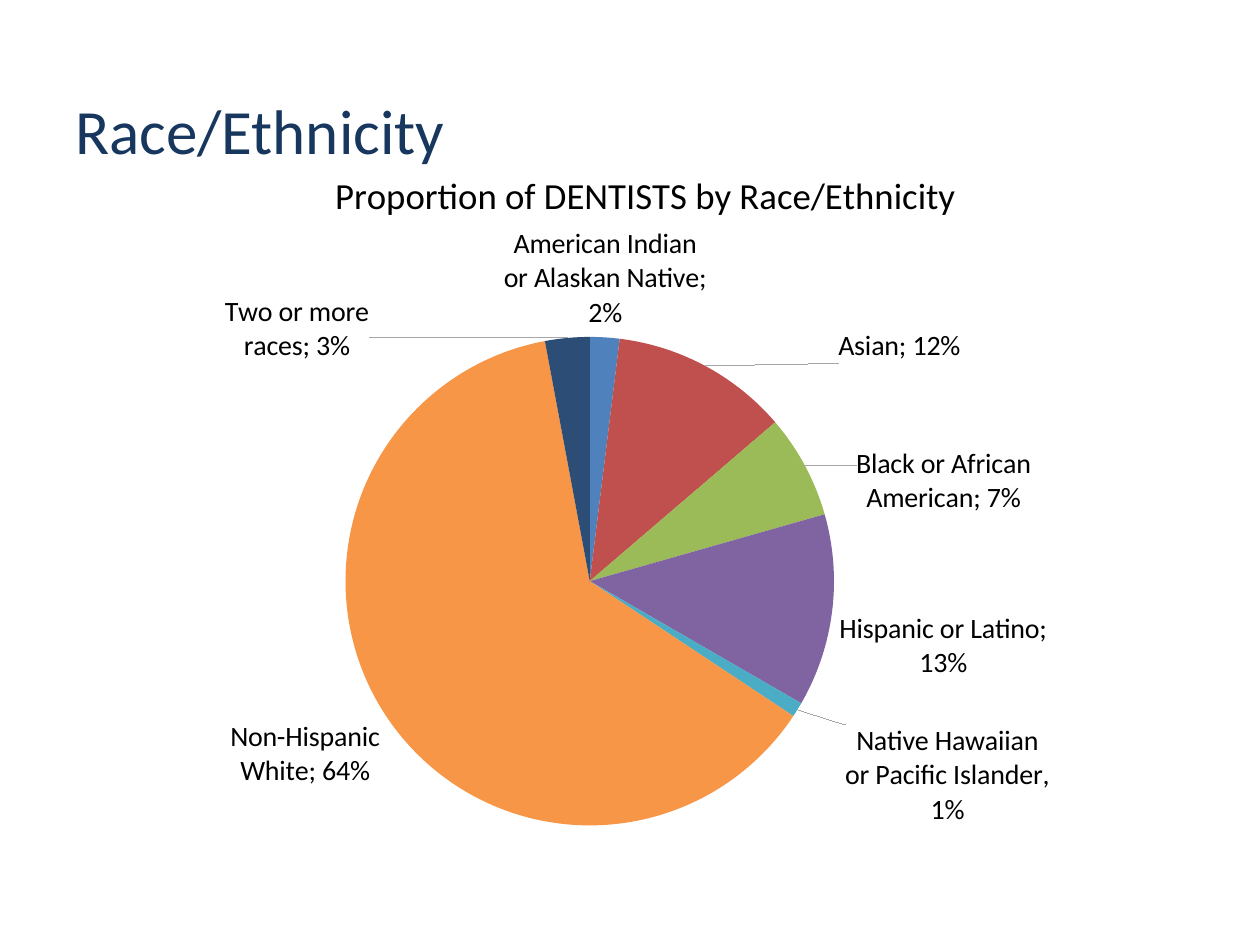
"""Build a slide with a pie chart of dentists by race and ethnicity."""
from typing import NamedTuple, Optional

from lxml import etree
from pptx import Presentation
from pptx.chart.data import CategoryChartData
from pptx.dml.color import RGBColor
from pptx.enum.chart import XL_CHART_TYPE, XL_LABEL_POSITION
from pptx.enum.text import MSO_ANCHOR
from pptx.oxml.ns import qn
from pptx.util import Emu, Pt

PIE = XL_CHART_TYPE.PIE
OUTSIDE_END = XL_LABEL_POSITION.OUTSIDE_END
MIDDLE = MSO_ANCHOR.MIDDLE

PX_PER_INCH = 126
FONT = "Calibri"
LABEL_SIZE = 16
NAVY = RGBColor(0x17, 0x37, 0x5E)
BLACK = RGBColor(0x00, 0x00, 0x00)
GRAY = RGBColor(0xA6, 0xA6, 0xA6)
BLUE = RGBColor(0x4F, 0x81, 0xBD)
RED = RGBColor(0xC0, 0x50, 0x4D)
GREEN = RGBColor(0x9B, 0xBB, 0x59)
PURPLE = RGBColor(0x80, 0x64, 0xA2)
TEAL = RGBColor(0x4B, 0xAC, 0xC6)
ORANGE = RGBColor(0xF7, 0x96, 0x46)
DARK_BLUE = RGBColor(0x2C, 0x4D, 0x75)


class Box(NamedTuple):
    left: int
    top: int
    width: int
    height: int


class Slice(NamedTuple):
    group: str
    share: float
    color: RGBColor
    label_shift: Optional[tuple[int, int]] = None
    separator: str = "; "


SLIDE_WIDTH, SLIDE_HEIGHT = 1260, 945
HEADING_BOX = Box(63, 52, 766, 155)
CHART_BOX = Box(63, 163, 1062, 664)
PIE_BOX = Box(283, 174, 489, 489)
CHART_TITLE_AT = (266, 0)

SLICES = [
    Slice("American Indian or Alaskan Native", 0.02, BLUE),
    Slice("Asian", 0.12, RED, (130, 4)),
    Slice("Black or African American", 0.07, GREEN, (45, 53)),
    Slice("Hispanic or Latino", 0.13, PURPLE),
    Slice("Native Hawaiian or Pacific Islander", 0.01, TEAL, (41, 11), ", "),
    Slice("Non-Hispanic White", 0.64, ORANGE),
    Slice("Two or more races", 0.03, DARK_BLUE, (-198, 33)),
]


def px(length: int) -> Emu:
    return Emu(round(length * 914400 / PX_PER_INCH))


def style_font(font, size: int, color: RGBColor) -> None:
    font.name = FONT
    font.size = Pt(size)
    font.bold = False
    font.color.rgb = color


def write_text(frame, text: str, *, size: int, color: RGBColor = BLACK) -> None:
    run = frame.paragraphs[0].add_run()
    run.text = text
    style_font(run.font, size, color)


def place_in_chart(element, index: int, left: int, top: int,
                   size: Optional[tuple[int, int]] = None) -> None:
    for old_layout in element.findall(qn("c:layout")):
        element.remove(old_layout)
    layout = etree.Element(qn("c:layout"))
    element.insert(index, layout)
    manual = etree.SubElement(layout, qn("c:manualLayout"))
    settings = {"x": left / CHART_BOX.width, "y": top / CHART_BOX.height}
    if size:
        settings = {"layoutTarget": "inner", "xMode": "edge", "yMode": "edge", **settings,
                    "w": size[0] / CHART_BOX.width, "h": size[1] / CHART_BOX.height}
    elif element.tag == qn("c:title"):
        settings = {"xMode": "edge", "yMode": "edge", **settings}
    for tag, value in settings.items():
        text = value if isinstance(value, str) else f"{value:.3f}"
        etree.SubElement(manual, qn(f"c:{tag}")).set("val", text)


def add_separator(labels, text: str) -> None:
    separator = etree.Element(qn("c:separator"))
    separator.text = text
    labels.find(qn("c:showBubbleSize")).addnext(separator)


def color_leader_lines(labels) -> None:
    switch = labels.find(qn("c:showLeaderLines"))
    if switch is None:
        switch = etree.SubElement(labels, qn("c:showLeaderLines"))
    switch.set("val", "1")
    leader = etree.Element(qn("c:leaderLines"))
    switch.addnext(leader)
    part = leader
    for tag in ("c:spPr", "a:ln", "a:solidFill", "a:srgbClr"):
        part = etree.SubElement(part, qn(tag))
    part.set("val", str(GRAY))


def label_slices(series) -> None:
    labels = series.data_labels
    labels.show_value = True
    labels.show_category_name = True
    labels.position = OUTSIDE_END
    labels.number_format = "0%"
    labels.number_format_is_linked = False
    style_font(labels.font, LABEL_SIZE, BLACK)
    for index, part in enumerate(SLICES):
        if part.label_shift:
            label = series.points[index].data_label
            style_font(label.font, LABEL_SIZE, BLACK)
            label.position = OUTSIDE_END
    all_labels = labels._element
    for label in all_labels.findall(qn("c:dLbl")):
        part = SLICES[int(label.find(qn("c:idx")).get("val"))]
        label.find(qn("c:showCatName")).set("val", "1")
        place_in_chart(label, 1, *part.label_shift)
        add_separator(label, part.separator)
    add_separator(all_labels, "; ")
    color_leader_lines(all_labels)


def add_pie(slide) -> None:
    data = CategoryChartData(number_format="0%")
    data.categories = [part.group for part in SLICES]
    data.add_series("Series 1", [part.share for part in SLICES])
    chart = slide.shapes.add_chart(PIE, *map(px, CHART_BOX), data).chart
    style_font(chart.font, 10, BLACK)
    chart.has_legend = False
    chart.has_title = True
    write_text(chart.chart_title.text_frame, "Proportion of DENTISTS by Race/Ethnicity", size=21)
    place_in_chart(chart.chart_title._element, 1, *CHART_TITLE_AT)
    plot_area = chart._chartSpace.chart.plotArea
    place_in_chart(plot_area, 0, PIE_BOX.left, PIE_BOX.top, (PIE_BOX.width, PIE_BOX.height))
    plot = chart.plots[0]
    plot.vary_by_categories = True
    series = plot.series[0]
    for index, part in enumerate(SLICES):
        fill = series.points[index].format.fill
        fill.solid()
        fill.fore_color.rgb = part.color
    label_slices(series)


def add_heading(slide) -> None:
    frame = slide.shapes.add_textbox(*map(px, HEADING_BOX)).text_frame
    frame.word_wrap = True
    frame.vertical_anchor = MIDDLE
    write_text(frame, "Race/Ethnicity", size=36, color=NAVY)


def main() -> None:
    deck = Presentation()
    deck.slide_width, deck.slide_height = px(SLIDE_WIDTH), px(SLIDE_HEIGHT)
    slide = deck.slides.add_slide(deck.slide_layouts[6])
    add_heading(slide)
    add_pie(slide)
    deck.save("out.pptx")


if __name__ == "__main__":
    main()
